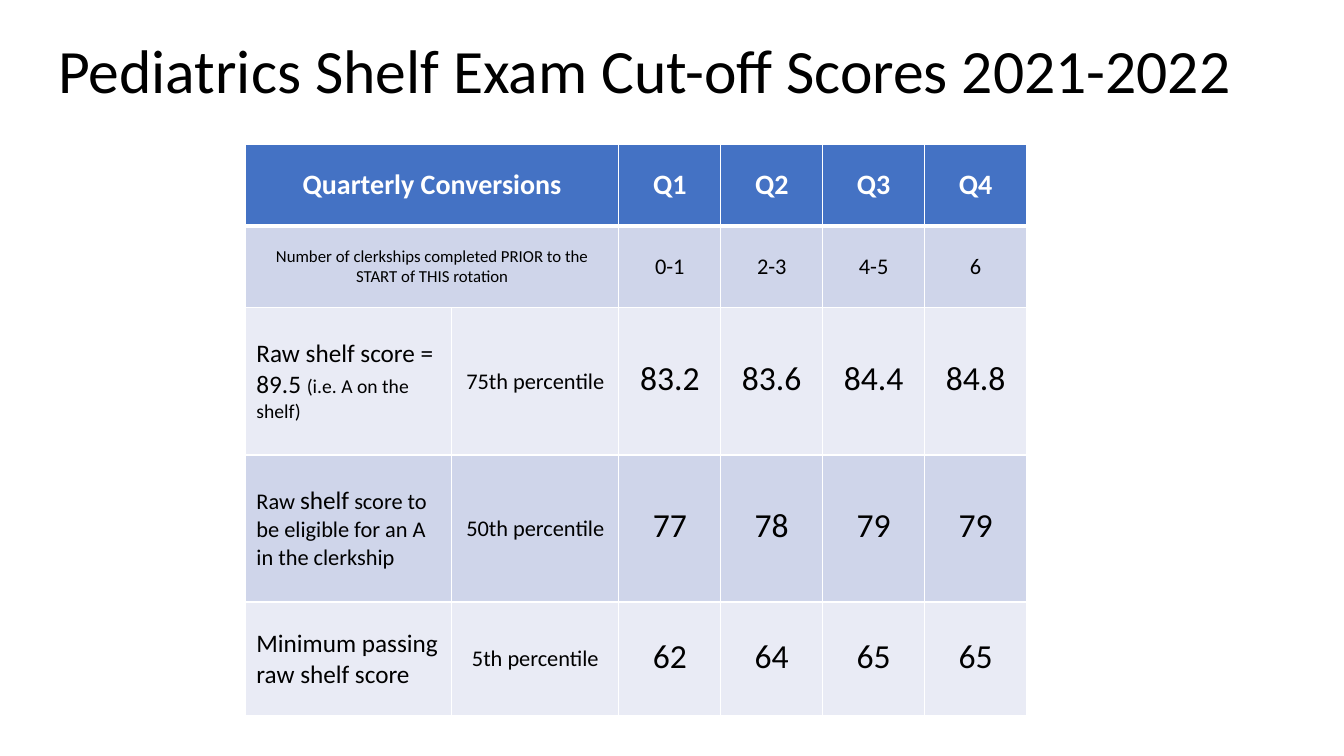
from lxml.etree import SubElement
from pptx import Presentation
from pptx.dml.color import RGBColor
from pptx.enum.text import MSO_ANCHOR, PP_ALIGN
from pptx.oxml.ns import qn
from pptx.util import Pt

WHITE, BLACK, BLUE = "FFFFFF", "000000", "4472C4"
BANDS = ["CFD5EA", "E9EBF5"]
WIDE_INSETS = (7.9, 4, 7.9, 4)
SCORE_INSETS = (0.7, 0.7, 0.7, 3.6)
MARGINS = ("margin_left", "margin_top", "margin_right", "margin_bottom")

COLUMNS = [147.4, 119.4] + [72.8] * 4
ROWS = [58.3, 58.3, 105.1, 105.1, 81.4]
HEADINGS = [
    ("Quarterly Conversions", 20, ["Q1", "Q2", "Q3", "Q4"], 20),
    ("Number of clerkships completed PRIOR to the START of THIS rotation", 12,
     ["0-1", "2-3", "4-5", "6"], 16),
]
CUTOFFS = [
    ([("Raw shelf score = 89.5 ", 18), ("(i.e. A on the shelf)", 14)],
     "75th percentile", ["83.2", "83.6", "84.4", "84.8"]),
    ([("Raw ", 16), ("shelf", 18),
      (" score to be eligible for an A in the clerkship", 16)],
     "50th percentile", ["77", "78", "79", "79"]),
    ([("Minimum passing raw shelf score", 18)],
     "5th percentile", ["62", "64", "65", "65"]),
]


def color(value):
    return RGBColor.from_string(value)


def apply(target, formats):
    for name, value in formats.items():
        setattr(target, name, value)


class SlideBuilder:
    font = "Calibri"

    def __init__(self, slide):
        self.slide = slide

    def add_spans(self, para, spans, ink=BLACK, bold=False):
        for text, size in spans:
            span = para.add_run()
            span.text = text
            apply(span.font, {"name": self.font, "size": Pt(size), "bold": bold})
            span.font.color.rgb = color(ink)

    def title(self, text, left, top, width, height):
        box = self.slide.shapes.add_textbox(Pt(left), Pt(top), Pt(width), Pt(height))
        apply(box.text_frame, {"word_wrap": True, "vertical_anchor": MSO_ANCHOR.MIDDLE})
        para = box.text_frame.paragraphs[0]
        para.line_spacing = 0.9
        self.add_spans(para, [(text, 44)])

    def table(self, left, top, columns, rows):
        frame = self.slide.shapes.add_table(
            len(rows), len(columns), Pt(left), Pt(top), Pt(sum(columns)), Pt(sum(rows)))
        table = frame.table
        for column, width in zip(table.columns, columns):
            column.width = Pt(width)
        for row, height in zip(table.rows, rows):
            row.height = Pt(height)
        for row_index in range(len(rows)):
            fill = BANDS[(row_index - 1) % 2] if row_index else BLUE
            widths = {"L": 1, "R": 1, "T": 3 if row_index == 1 else 1,
                      "B": 1 if row_index else 3}
            for cell in table.rows[row_index].cells:
                self.borders(cell, widths)
                cell.fill.solid()
                cell.fill.fore_color.rgb = color(fill)
        return table

    def borders(self, cell, widths):
        properties = cell._tc.get_or_add_tcPr()
        for side, width in widths.items():
            line = SubElement(properties, qn(f"a:ln{side}"), w=str(Pt(width)))
            fill = SubElement(line, qn("a:solidFill"))
            SubElement(fill, qn("a:srgbClr"), val=WHITE)

    def cell(self, cell, spans, align=PP_ALIGN.CENTER, insets=WIDE_INSETS, **style):
        apply(cell, dict(zip(MARGINS, map(Pt, insets))))
        cell.vertical_anchor = MSO_ANCHOR.MIDDLE
        para = cell.text_frame.paragraphs[0]
        para.alignment = align
        self.add_spans(para, spans, **style)


def main():
    deck = Presentation()
    apply(deck, {"slide_width": Pt(960), "slide_height": Pt(540)})
    page = SlideBuilder(deck.slides.add_slide(deck.slide_layouts[6]))
    page.title("Pediatrics Shelf Exam Cut-off Scores 2021-2022", 34.6, 0, 859.7, 104.4)
    table = page.table(175.3, 103.3, COLUMNS, ROWS)

    for row, (label, label_size, quarters, size) in enumerate(HEADINGS):
        style = {} if row else {"ink": WHITE, "bold": True}
        table.cell(row, 0).merge(table.cell(row, 1))
        page.cell(table.cell(row, 0), [(label, label_size)], **style)
        for column, quarter in enumerate(quarters, 2):
            page.cell(table.cell(row, column), [(quarter, size)], **style)

    for row, (label, percentile, scores) in enumerate(CUTOFFS, len(HEADINGS)):
        page.cell(table.cell(row, 0), label, PP_ALIGN.LEFT)
        page.cell(table.cell(row, 1), [(percentile, 16)])
        for column, score in enumerate(scores, 2):
            page.cell(table.cell(row, column), [(score, 24)], insets=SCORE_INSETS)

    deck.save("out.pptx")


if __name__ == "__main__":
    main()
